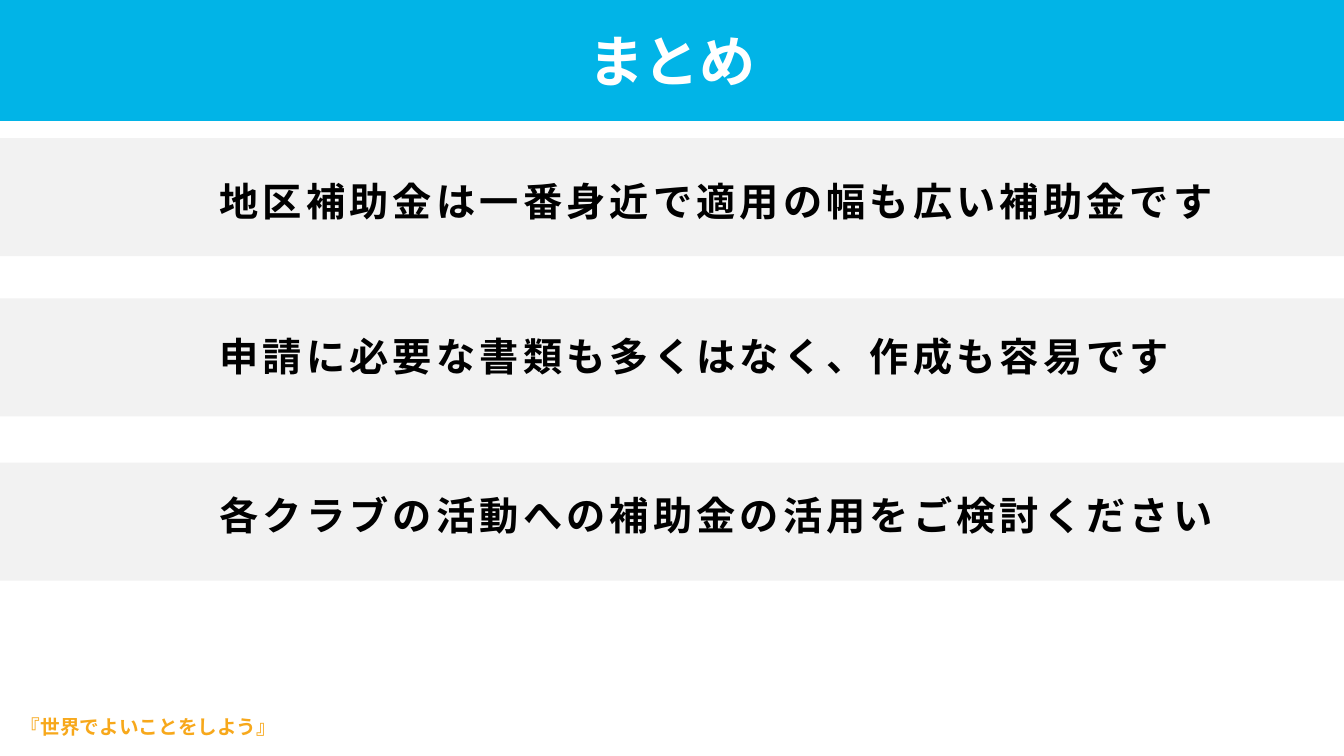
import pptx
import pptx.util
import pptx.dml.color
import pptx.enum.shapes
import pptx.enum.text

W, H = 13.33, 7.5
FONT = "Noto Sans CJK JP"
Inches, Pt = pptx.util.Inches, pptx.util.Pt
MSO_SHAPE = pptx.enum.shapes.MSO_SHAPE
PP_ALIGN, MSO_ANCHOR = pptx.enum.text.PP_ALIGN, pptx.enum.text.MSO_ANCHOR
MSO_AUTO_SIZE = pptx.enum.text.MSO_AUTO_SIZE

prs = pptx.Presentation()
prs.slide_width, prs.slide_height = Inches(W), Inches(H)
s = prs.slides.add_slide(prs.slide_layouts[6])


def bar(kind, top, height, color):
    """Full-width band without outline or shadow."""
    sp = s.shapes.add_shape(kind, 0, Inches(top), Inches(W), Inches(height))
    sp.shadow.inherit = False
    sp.fill.solid()
    sp.fill.fore_color.rgb = pptx.dml.color.RGBColor.from_string(color)
    sp.line.fill.background()
    return sp


def write(sp, text, size, color, spacing=0, frame={}, para={}):
    """Bold text in a shape, with frame and paragraph formats from dicts."""
    tf = sp.text_frame
    p = tf.paragraphs[0]
    r = p.add_run()
    r.text = text
    font = {"name": FONT, "size": Pt(size), "bold": True}
    for target, formats in ((tf, frame), (p, para), (r.font, font)):
        for key, value in formats.items():
            setattr(target, key, value)
    r.font.color.rgb = pptx.dml.color.RGBColor.from_string(color)
    rPr = r.font._element
    rPr.set("lang", "ja-JP")
    if spacing:
        rPr.set("spc", str(spacing * 100))
    # East Asian typeface follows the Latin one
    ea = pptx.oxml.parse_xml(
        '<a:ea xmlns:a="http://schemas.openxmlformats.org/drawingml/2006/main"'
        f' typeface="{FONT}"/>')
    rPr.find(pptx.oxml.ns.qn("a:latin")).addnext(ea)


# Title band
write(bar(MSO_SHAPE.RECTANGLE, 0, 0.16 * H, "01B4E7"), "まとめ", 40, "FFFFFF",
      frame={"vertical_anchor": MSO_ANCHOR.MIDDLE},
      para={"alignment": PP_ALIGN.CENTER})

# Summary points: band top, text top, text width, wording
points = [
    (1.37, 1.71, 10.2, "地区補助金は一番身近で適用の幅も広い補助金です"),
    (2.96, 3.25, 9.77, "申請に必要な書類も多くはなく、作成も容易です"),
    (4.59, 4.83, 10.2, "各クラブの活動への補助金の活用をご検討ください"),
]
for band_top, text_top, width, text in points:
    sp = bar(MSO_SHAPE.ROUNDED_RECTANGLE, band_top, 1.17, "F2F2F2")
    sp.adjustments[0] = 0
    tb = s.shapes.add_textbox(Inches(2.08), Inches(text_top),
                              Inches(width), Inches(0.57))
    write(tb, text, 28, "000000", spacing=3,
          frame={"word_wrap": False,
                 "auto_size": MSO_AUTO_SIZE.SHAPE_TO_FIT_TEXT})

# Footer motto
tb = s.shapes.add_textbox(Inches(0.11), Inches(7.07), Inches(2.9), Inches(0.31))
write(tb, "『世界でよいことをしよう』", 14, "F7A81B",
      frame={"word_wrap": True},
      para={"line_spacing": 0.9, "space_before": Pt(10)})

prs.save("out.pptx")
